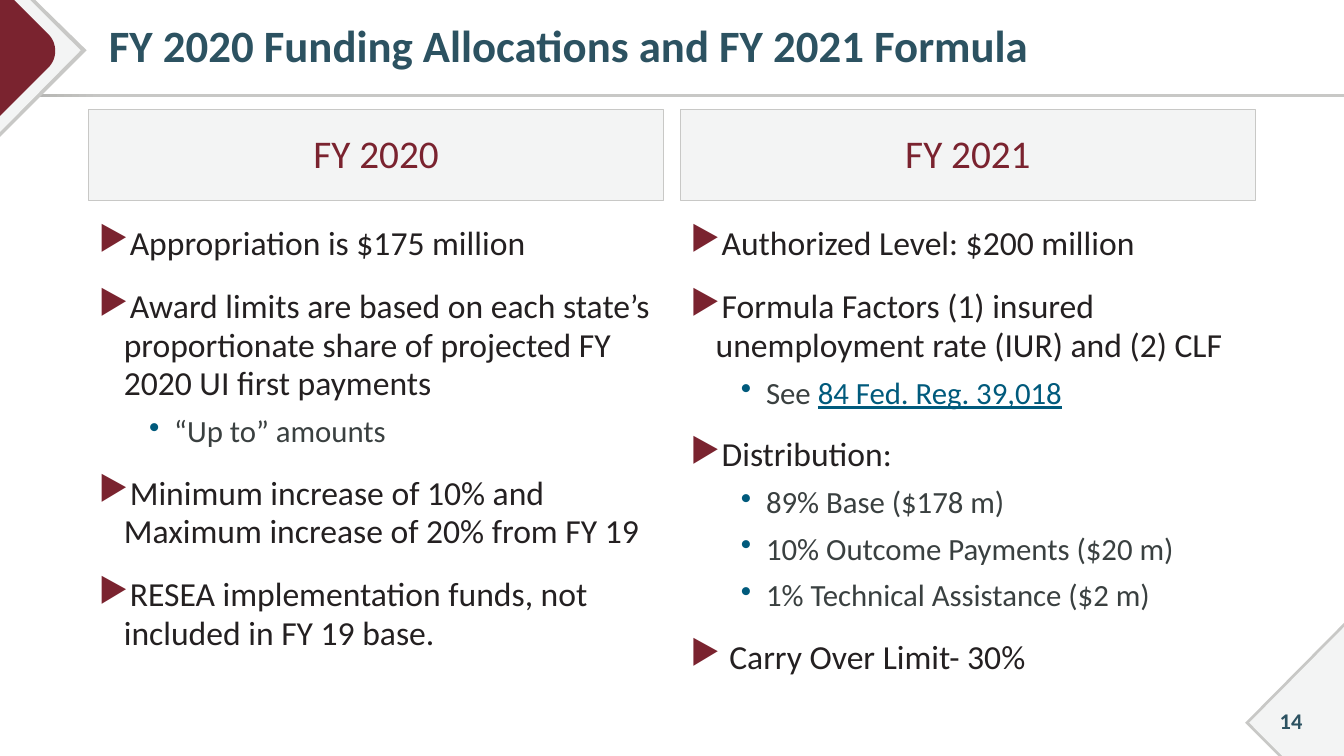
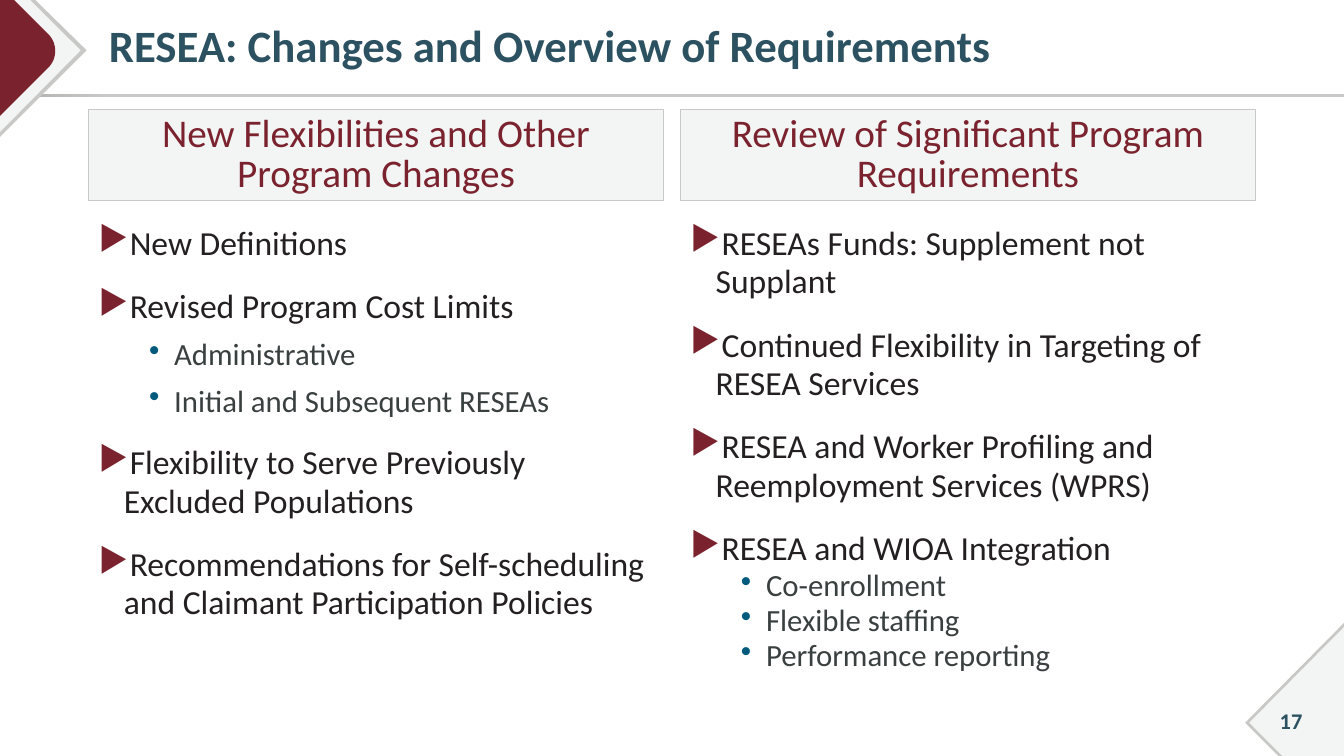
from dataclasses import dataclass

from lxml import etree
from pptx import Presentation
from pptx.dml.color import RGBColor
from pptx.enum import shapes, text
from pptx.oxml import ns
from pptx.util import Inches, Pt


@dataclass(frozen=True)
class Theme:
    font: str = "Calibri"
    teal: str = "2C5261"
    maroon: str = "7A232F"
    blue: str = "005A7C"
    ink: str = "242021"
    soft_ink: str = "3A4040"
    pale: str = "F3F4F4"
    rule: str = "C8C8C6"
    rule_dark: str = "ABABA8"
    title_size: int = 32
    header_size: int = 28
    number_size: int = 16


theme = Theme()

# Bullet levels: character, bullet colour, text colour, size, left indent
LEVELS = [
    ("▶", theme.maroon, theme.ink, 24, 0.25),
    ("•", theme.blue, theme.soft_ink, 22, 0.75),
]
HANGING = 0.25
MAIN_GAP, SUB_GAP = 18, 8
COLUMN_LEFTS = (0.88, 6.75)
COLUMN_WIDTH = 5.7

# Corner ornaments: outline points and fill, back to front
start, control_1, control_2, end = (0.48, 0.34), (0.57, 0.43), (0.57, 0.58), (0.48, 0.67)
STEPS = 16
rounded_tip = []
for step in range(STEPS + 1):
    t = step / STEPS
    weights = ((1 - t) ** 3, 3 * t * (1 - t) ** 2, 3 * t * t * (1 - t), t ** 3)
    rounded_tip.append(tuple(
        sum(weight * point[axis] for weight, point in
            zip(weights, (start, control_1, control_2, end)))
        for axis in (0, 1)))

LOWER_CORNER = [
    ([(13.33, 6.18), (13.33, 7.5), (12.68, 7.5), (12.35, 7.17)], theme.rule),
    ([(13.33, 6.22), (13.33, 7.5), (12.72, 7.5), (12.39, 7.17)], theme.pale),
]
UPPER_CORNER = [
    ([(0, 0), (0.35, 0), (0.86, 0.5), (0, 1.36)], theme.rule),
    ([(0, 0), (0.3, 0), (0.8, 0.5), (0, 1.31)], theme.pale),
    ([(0, 0), (0.14, 0), *rounded_tip, (0, 1.15)], theme.maroon),
]

# Content: number, title, header line spacing, columns of
# (header, gap above sub-bullets, [(level, text, optional underlined text)])
SLIDES = [
    (14, "FY 2020 Funding Allocations and FY 2021 Formula", 0.95, [
        ("FY 2020", SUB_GAP, [
            (0, "Appropriation is $175 million"),
            (0, "Award limits are based on each state’s proportionate share "
                "of projected FY 2020 UI first payments"),
            (1, "“Up to” amounts"),
            (0, "Minimum increase of 10% and Maximum increase of 20% from FY 19"),
            (0, "RESEA implementation funds, not included in FY 19 base."),
        ]),
        ("FY 2021", SUB_GAP, [
            (0, "Authorized Level: $200 million"),
            (0, "Formula Factors (1) insured unemployment rate (IUR) and (2) CLF"),
            (1, "See ", "84 Fed. Reg. 39,018"),
            (0, "Distribution:"),
            (1, "89% Base ($178 m)"),
            (1, "10% Outcome Payments ($20 m)"),
            (1, "1% Technical Assistance ($2 m)"),
            (0, " Carry Over Limit- 30%"),
        ]),
    ]),
    (17, "RESEA: Changes and Overview of Requirements", 0.85, [
        ("New Flexibilities and Other Program Changes", SUB_GAP, [
            (0, "New Definitions"),
            (0, "Revised Program Cost Limits"),
            (1, "Administrative"),
            (1, "Initial and Subsequent RESEAs"),
            (0, "Flexibility to Serve Previously Excluded Populations"),
            (0, "Recommendations for Self-scheduling and Claimant "
                "Participation Policies"),
        ]),
        ("Review of Significant Program Requirements", 0, [
            (0, "RESEAs Funds: Supplement not Supplant"),
            (0, "Continued Flexibility in Targeting of RESEA Services"),
            (0, "RESEA and Worker Profiling and Reemployment Services (WPRS)"),
            (0, "RESEA and WIOA Integration"),
            (1, "Co-enrollment"),
            (1, "Flexible staffing"),
            (1, "Performance reporting"),
        ]),
    ]),
]


def write_line(shape, words, size, color, align, bold=False, spacing=1.0):
    """Put one vertically centred line of text in a shape."""
    frame = shape.text_frame
    frame.word_wrap = True
    frame.vertical_anchor = text.MSO_ANCHOR.MIDDLE
    frame.text = words
    paragraph = frame.paragraphs[0]
    paragraph.alignment = align
    paragraph.line_spacing = spacing
    font = paragraph.runs[0].font
    font.name, font.size, font.bold = theme.font, Pt(size), bold
    font.color.rgb = RGBColor.from_string(color)


def add_bullet(paragraph, level):
    """Give a paragraph the hanging bullet of its level."""
    character, color, _, _, left = LEVELS[level]
    paragraph.level = level
    properties = paragraph._p.get_or_add_pPr()
    properties.set("marL", str(Inches(left)))
    properties.set("indent", str(-Inches(HANGING)))
    bullet_color = etree.SubElement(properties, ns.qn("a:buClr"))
    etree.SubElement(bullet_color, ns.qn("a:srgbClr"), val=color)
    etree.SubElement(properties, ns.qn("a:buChar"), char=character)


presentation = Presentation()
presentation.slide_width = Inches(13.33)
presentation.slide_height = Inches(7.5)

for number, title, header_spacing, columns in SLIDES:
    slide = presentation.slides.add_slide(presentation.slide_layouts[6])

    # Rule under the title
    rule = slide.shapes.add_shape(shapes.MSO_SHAPE.RECTANGLE, 0, Inches(0.93),
                                  presentation.slide_width, Inches(0.03))
    rule.shadow.inherit = False
    rule.line.fill.background()
    rule.fill.gradient()
    rule.fill.gradient_angle = 0
    for stop, position, color in zip(rule.fill.gradient_stops, (0, 0.08),
                                     (theme.rule_dark, theme.rule)):
        stop.position = position
        stop.color.rgb = RGBColor.from_string(color)

    # Corner ornaments
    for points, color in LOWER_CORNER + UPPER_CORNER:
        outline = [(Inches(x), Inches(y)) for x, y in points]
        builder = slide.shapes.build_freeform(*outline[0])
        builder.add_line_segments(outline[1:], close=True)
        ornament = builder.convert_to_shape()
        ornament.shadow.inherit = False
        ornament.line.fill.background()
        ornament.fill.solid()
        ornament.fill.fore_color.rgb = RGBColor.from_string(color)

    # Slide number and title
    number_box = slide.shapes.add_textbox(Inches(12.45), Inches(6.95),
                                          Inches(0.71), Inches(0.4))
    write_line(number_box, str(number), theme.number_size, theme.teal,
               text.PP_ALIGN.CENTER, bold=True)
    title_box = slide.shapes.add_textbox(Inches(0.88), Inches(0.05),
                                         Inches(12.12), Inches(0.86))
    title_box.text_frame.margin_left = Inches(0.2)
    write_line(title_box, title, theme.title_size, theme.teal,
               text.PP_ALIGN.LEFT, bold=True, spacing=0.9)

    for left, (heading, sub_gap, items) in zip(COLUMN_LEFTS, columns):
        # Column header
        header = slide.shapes.add_shape(shapes.MSO_SHAPE.RECTANGLE, Inches(left),
                                        Inches(1.09), Inches(COLUMN_WIDTH), Inches(0.9))
        header.shadow.inherit = False
        header.fill.solid()
        header.fill.fore_color.rgb = RGBColor.from_string(theme.pale)
        header.line.color.rgb = RGBColor.from_string(theme.rule)
        header.line.width = Pt(0.75)
        write_line(header, heading, theme.header_size, theme.maroon,
                   text.PP_ALIGN.CENTER, spacing=header_spacing)

        # Column bullets
        body = slide.shapes.add_textbox(Inches(left), Inches(2.18),
                                        Inches(COLUMN_WIDTH), Inches(4.59))
        frame = body.text_frame
        frame.word_wrap = True
        for index, (level, words, *underlined) in enumerate(items):
            paragraph = frame.add_paragraph() if index else frame.paragraphs[0]
            paragraph.text = words
            add_bullet(paragraph, level)
            paragraph.line_spacing = 0.95
            if index:
                paragraph.space_before = Pt(sub_gap if level else MAIN_GAP)
            for citation in underlined:
                paragraph.add_run().text = citation
            _, _, color, size, _ = LEVELS[level]
            for position, run in enumerate(paragraph.runs):
                run.font.name, run.font.size = theme.font, Pt(size)
                run.font.underline = position > 0
                run.font.color.rgb = RGBColor.from_string(
                    theme.blue if position else color)

presentation.save("out.pptx")
